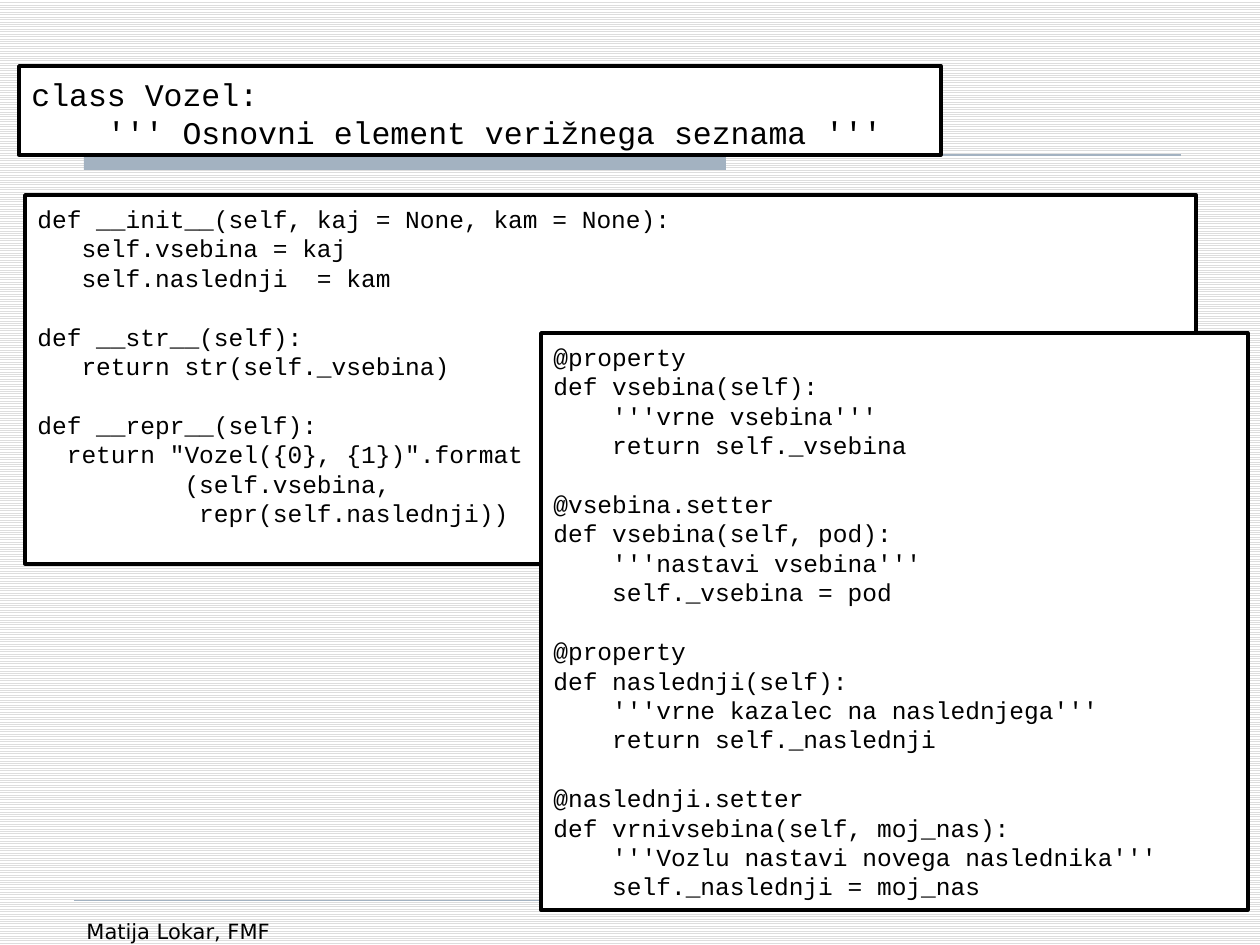
"""Build a slide with the Python code of a linked-list node class."""
from lxml.etree import SubElement
from pptx import Presentation
from pptx.dml.color import RGBColor
from pptx.enum.dml import MSO_PATTERN
from pptx.enum.shapes import MSO_CONNECTOR, MSO_SHAPE
from pptx.enum.text import MSO_ANCHOR, PP_ALIGN
from pptx.oxml.ns import qn
from pptx.util import Pt

PX = 914400 // 126
ACCENT = "A3B2C1"


def rgb(value):
    return RGBColor.from_string(value)


def set_font(paragraph, name, size):
    paragraph.font.name = name
    paragraph.font.size = Pt(size)
    paragraph.font.color.rgb = rgb("000000")


init_code = [
    ["def __init__(self, kaj = None, kam = None):",
     "   self.vsebina = kaj",
     "   self.naslednji  = kam"],
    ["def __str__(self):",
     "   return str(self._vsebina)"],
    ["def __repr__(self):",
     "  return \"Vozel({0}, {1})\".format\n"
     "          (self.vsebina,\n"
     "           repr(self.naslednji))"],
]
property_code = [
    ["@property",
     "def vsebina(self):",
     "    '''vrne vsebina'''",
     "    return self._vsebina"],
    ["@vsebina.setter",
     "def vsebina(self, pod):",
     "    '''nastavi vsebina'''",
     "    self._vsebina = pod"],
    ["@property",
     "def naslednji(self):",
     "    '''vrne kazalec na naslednjega'''",
     "    return self._naslednji"],
    ["@naslednji.setter",
     "def vrnivsebina(self, moj_nas):",
     "    '''Vozlu nastavi novega naslednika'''",
     "    self._naslednji = moj_nas"],
]
class_code = [
    ["class Vozel:",
     "    ''' Osnovni element verižnega seznama '''"],
]

deck = Presentation()
deck.slide_width, deck.slide_height = 1260 * PX, 945 * PX
slide = deck.slides.add_slide(deck.slide_layouts[6])
backdrop = slide.background.fill
backdrop.patterned()
backdrop.pattern = MSO_PATTERN.LIGHT_HORIZONTAL
backdrop.fore_color.rgb = rgb("DDDDDD")
backdrop.back_color.rgb = rgb("FFFFFF")

title_bar = slide.shapes.add_shape(
    MSO_SHAPE.RECTANGLE, 84 * PX, 155 * PX, 642 * PX, 15 * PX)
title_bar.shadow.inherit = False
title_bar.fill.solid()
title_bar.fill.fore_color.rgb = rgb(ACCENT)
title_bar.line.fill.background()

for left, right, y, weight in [(84, 1181, 155, 0.75), (74, 1167, 900, 0.25)]:
    rule = slide.shapes.add_connector(
        MSO_CONNECTOR.STRAIGHT, left * PX, y * PX, right * PX, y * PX)
    rule.line.color.rgb = rgb(ACCENT)
    rule.line.width = Pt(weight)
    SubElement(rule._element.spPr, qn("a:effectLst"))

footer = slide.shapes.add_textbox(74 * PX, 912 * PX, 273 * PX, 65 * PX)
footer.text_frame.word_wrap = True
author = footer.text_frame.paragraphs[0]
author.text = "Matija Lokar, FMF"
set_font(author, "DejaVu Sans", 12)

for left, top, width, height, size, blocks in [
    (25, 195, 1171, 369, 14, init_code),
    (541, 333, 707, 577, 14, property_code),
    (19, 66, 922, 89, 18, class_code),
]:
    panel = slide.shapes.add_shape(
        MSO_SHAPE.RECTANGLE, left * PX, top * PX, width * PX, height * PX)
    panel.shadow.inherit = False
    panel.fill.solid()
    panel.fill.fore_color.rgb = rgb("FFFFFF")
    panel.line.color.rgb = rgb("000000")
    panel.line.width = Pt(2)
    frame = panel.text_frame
    frame.word_wrap = True
    frame.vertical_anchor = MSO_ANCHOR.TOP
    frame.margin_top = 9 * PX
    frame.margin_bottom = 0
    pitch = Pt(1.2 * size)
    paragraph = frame.paragraphs[0]
    for block_index, block in enumerate(blocks):
        for line_index, code in enumerate(block):
            if block_index or line_index:
                paragraph = frame.add_paragraph()
            paragraph.text = code
            paragraph.alignment = PP_ALIGN.LEFT
            paragraph.line_spacing = pitch
            if block_index and not line_index:
                paragraph.space_before = pitch
            set_font(paragraph, "Courier New", size)

deck.save("out.pptx")
